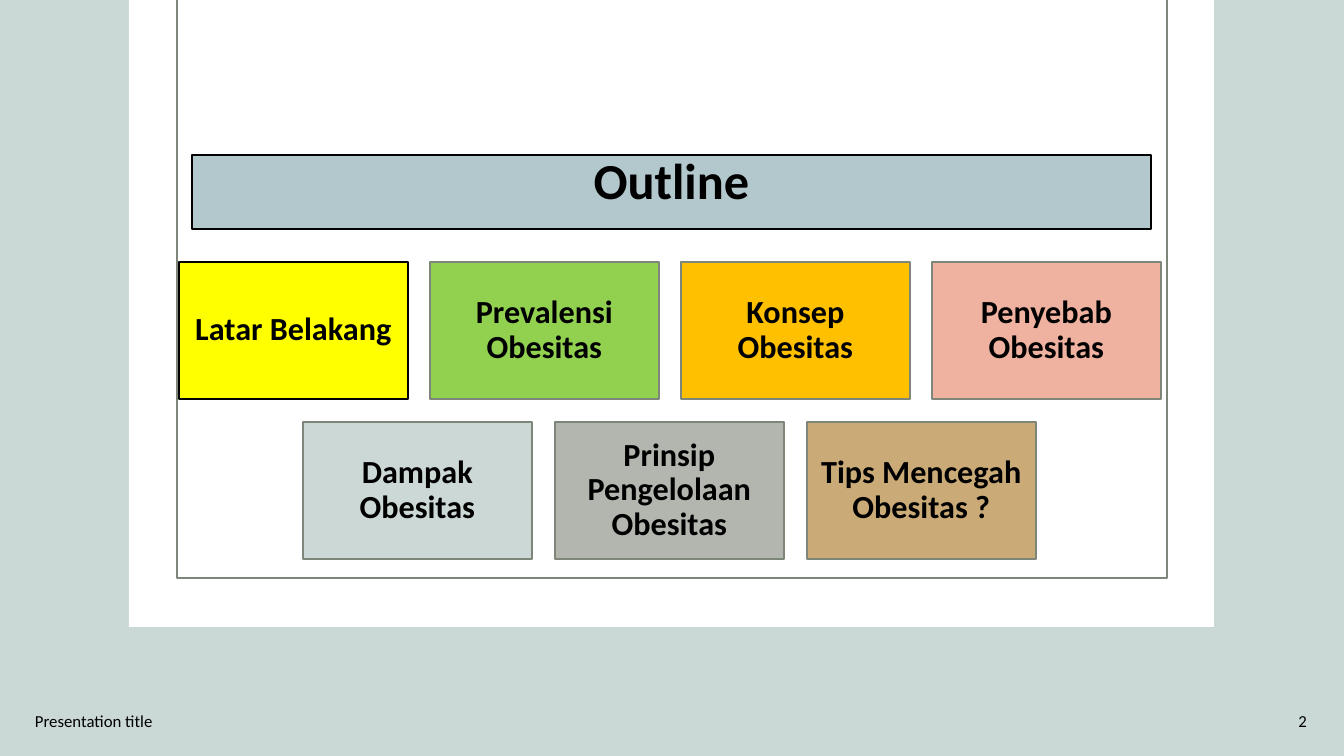
"""Build the outline slide on obesity with python-pptx."""
from dataclasses import dataclass

from pptx import Presentation
from pptx.dml.color import RGBColor
from pptx.enum.shapes import MSO_SHAPE as Shape
from pptx.enum.text import MSO_ANCHOR as Anchor, PP_ALIGN as Align
from pptx.util import Emu, Pt

PX_PER_INCH = 100.8
COLOURS = {
    "mist": "CAD8D6", "white": "FFFFFF", "black": "000000", "olive": "7E8679",
    "steel": "B2C8CD", "yellow": "FFFF00", "green": "92D050", "amber": "FFC000",
    "salmon": "EFB1A0", "pale": "CCD8D6", "grey": "B2B6AF", "tan": "CAAA77",
}
TILE_WIDTH, TILE_HEIGHT = 229, 137


@dataclass(frozen=True)
class Area:
    left: int
    top: int
    width: int
    height: int


@dataclass(frozen=True)
class Topic:
    text: str
    fill: str
    line: str = "olive"


@dataclass(frozen=True)
class TopicRow:
    left: int
    top: int
    step: int
    topics: tuple[Topic, ...]


@dataclass(frozen=True)
class Footer:
    text: str
    area: Area
    align: Align


TOPIC_ROWS = (
    TopicRow(179, 262, 251, (
        Topic("Latar Belakang", "yellow", "black"),
        Topic("Prevalensi Obesitas", "green"),
        Topic("Konsep Obesitas", "amber"),
        Topic("Penyebab Obesitas", "salmon"),
    )),
    TopicRow(303, 422, 252, (
        Topic("Dampak Obesitas", "pale"),
        Topic("Prinsip Pengelolaan Obesitas", "grey"),
        Topic("Tips Mencegah Obesitas ?", "tan"),
    )),
)
FOOTERS = (
    Footer("Presentation title", Area(25, 701, 454, 40), Align.LEFT),
    Footer("2", Area(1015, 701, 302, 40), Align.RIGHT),
)


def px(length: int) -> Emu:
    return Emu(round(length * 914400 / PX_PER_INCH))


def colour(name: str) -> RGBColor:
    return RGBColor.from_string(COLOURS[name])


def bounds(area: Area) -> tuple[Emu, ...]:
    return px(area.left), px(area.top), px(area.width), px(area.height)


def add_rectangle(page, area: Area, fill: str = "", line: str = ""):
    box = page.shapes.add_shape(Shape.RECTANGLE, *bounds(area))
    box.shadow.inherit = False
    if fill:
        box.fill.solid()
        box.fill.fore_color.rgb = colour(fill)
    else:
        box.fill.background()
    if line:
        box.line.color.rgb = colour(line)
        box.line.width = Pt(1)
    else:
        box.line.fill.background()
    return box


def write(box, text: str, *, size: int, bold: bool = False, align: Align = Align.CENTER,
          anchor: Anchor = Anchor.MIDDLE, spacing: float = 1.0,
          inset_x: int = 10, inset_y: int = 5) -> None:
    frame = box.text_frame
    frame.word_wrap = True
    frame.vertical_anchor = anchor
    frame.margin_left = frame.margin_right = px(inset_x)
    frame.margin_top = frame.margin_bottom = px(inset_y)
    para = frame.paragraphs[0]
    para.alignment = align
    para.line_spacing = spacing
    span = para.add_run()
    span.text = text
    span.font.name = "Calibri"
    span.font.size = Pt(size)
    span.font.bold = bold
    span.font.color.rgb = colour("black")


def add_topic_row(page, row: TopicRow) -> None:
    for index, topic in enumerate(row.topics):
        area = Area(row.left + index * row.step, row.top, TILE_WIDTH, TILE_HEIGHT)
        tile = add_rectangle(page, area, topic.fill, topic.line)
        write(tile, topic.text, size=23, bold=True, spacing=0.9, inset_y=10)


def main() -> None:
    deck = Presentation()
    deck.slide_width, deck.slide_height = px(1344), px(756)
    page = deck.slides.add_slide(deck.slide_layouts[6])
    page.background.fill.solid()
    page.background.fill.fore_color.rgb = colour("mist")

    add_rectangle(page, Area(129, 0, 1085, 627), fill="white")
    add_rectangle(page, Area(177, -1, 990, 579), line="olive")
    heading = add_rectangle(page, Area(192, 155, 959, 74), "steel", "black")
    write(heading, "Outline", size=36, bold=True, anchor=Anchor.TOP, spacing=0.9, inset_y=1)

    for row in TOPIC_ROWS:
        add_topic_row(page, row)
    for footer in FOOTERS:
        box = page.shapes.add_textbox(*bounds(footer.area))
        write(box, footer.text, size=12, align=footer.align)

    deck.save("out.pptx")


if __name__ == "__main__":
    main()
